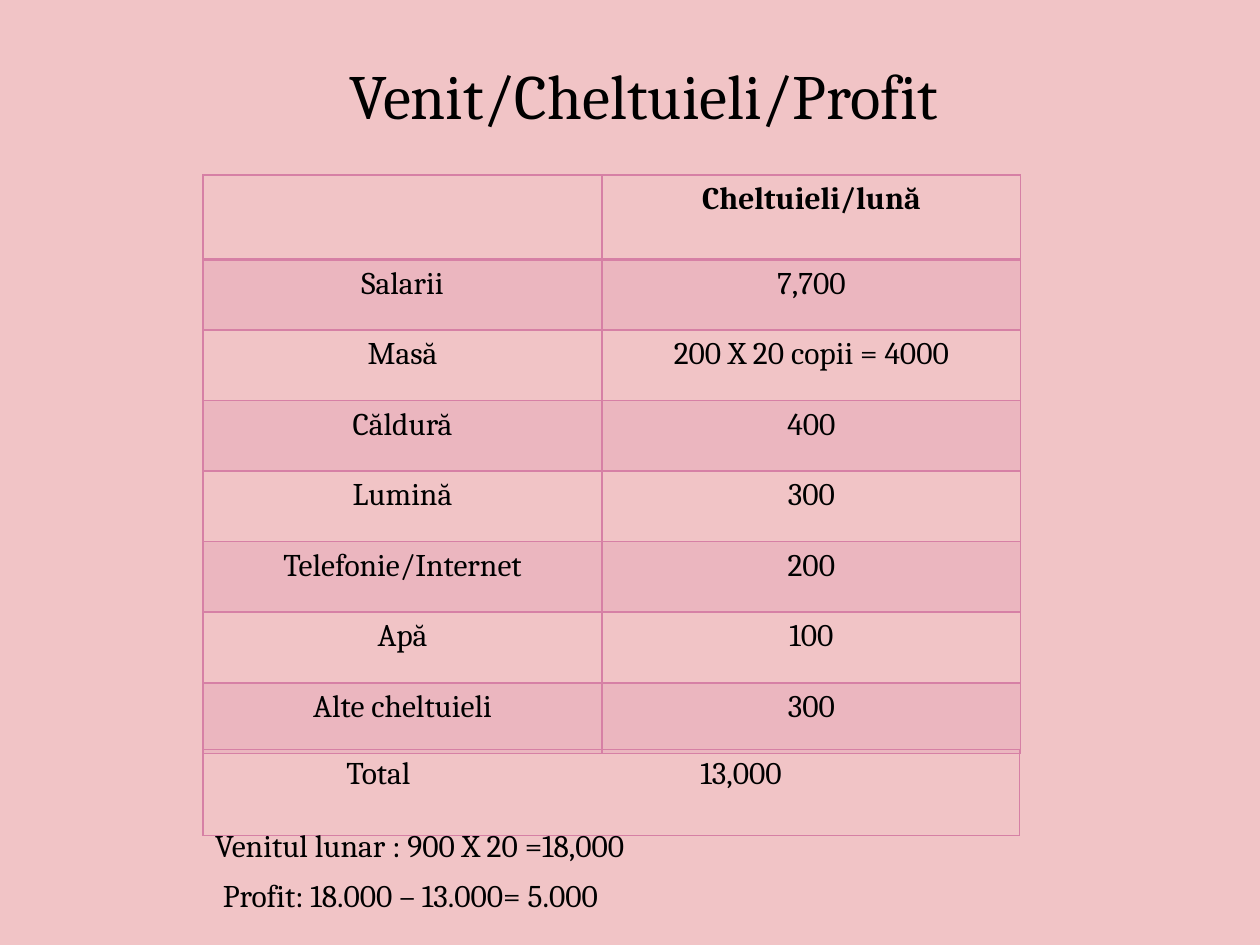
"""Build the monthly income, cost and profit slide."""
from lxml import etree
from pptx import Presentation
from pptx import util as u
from pptx.dml.color import RGBColor
from pptx.enum import text
from pptx.oxml import ns

BACK = RGBColor(0xF1, 0xC4, 0xC6)
PINK = RGBColor(0xD6, 0x80, 0xA5)
BLACK = RGBColor(0, 0, 0)
MID = text.PP_ALIGN.CENTER
LEFT = text.PP_ALIGN.LEFT
COSTS = [
    ("", "Cheltuieli/lună"),
    ("Salarii", "7,700"),
    ("Masă", "200 X 20 copii = 4000"),
    ("Căldură", "400"),
    ("Lumină", "300"),
    ("Telefonie/Internet", "200"),
    ("Apă", "100"),
    ("Alte cheltuieli", "300"),
]


def put(item, vals):
    for key, val in vals.items():
        setattr(item, key, val)


def sub(node, tag, **vals):
    return etree.SubElement(node, ns.qn(tag), **vals)


class Page:
    def __init__(self, slide):
        self.slide = slide
        self.font = {"name": "Cambria", "size": u.Pt(18), "bold": False}
        fill = slide.background.fill
        fill.solid()
        fill.fore_color.rgb = BACK

    def letter(self, para, words, align=LEFT, tab=None, **style):
        para.alignment = align
        if tab:
            stops = sub(para._p.get_or_add_pPr(), "a:tabLst")
            sub(stops, "a:tab", pos=str(u.Inches(tab)), algn="l")
        put(para.font, self.font | style)
        para.font.color.rgb = BLACK
        if words:
            run = para.add_run()
            run.text = words
            put(run.font, self.font | style)
            run.font.color.rgb = BLACK

    def label(self, words, place, frame=None, gap=None, **style):
        box = self.slide.shapes.add_textbox(*map(u.Inches, place))
        put(box.text_frame, {"word_wrap": True} | (frame or {}))
        para = box.text_frame.paragraphs[0]
        para.line_spacing = gap
        self.letter(para, words, **style)

    def edge(self, cell, top=1, base=1):
        props = cell._tc.get_or_add_tcPr()
        for side, width in zip("LRTB", (1, 1, top, base)):
            line = sub(props, f"a:ln{side}", w=str(u.Pt(width)))
            sub(sub(line, "a:solidFill"), "a:srgbClr", val=str(PINK))

    def tint(self, cell, shade):
        if not shade:
            cell.fill.background()
            return
        cell.fill.solid()
        cell.fill.fore_color.rgb = PINK
        color = cell._tc.tcPr.find(ns.qn("a:solidFill"))[0]
        sub(color, "a:alpha", val="20000")

    def grid(self, left, top, cols, rows):
        place = map(u.Inches, (left, top, sum(cols), sum(rows)))
        table = self.slide.shapes.add_table(len(rows), len(cols), *place).table
        put(table, {"first_row": False, "horz_banding": False})
        for col, width in zip(table.columns, cols):
            col.width = u.Inches(width)
        for row, height in zip(table.rows, rows):
            row.height = u.Inches(height)
        return table

    def costs(self, data, left, top, cols, rows):
        table = self.grid(left, top, cols, rows)
        for i, row in enumerate(data):
            for j, words in enumerate(row):
                cell = table.cell(i, j)
                self.edge(cell, top=1 + (i == 1), base=1 + (i == 0))
                self.tint(cell, i % 2)
                self.letter(cell.text_frame.paragraphs[0], words, MID, bold=i == 0)

    def total(self, words, left, top, width, height, inset, tab):
        cell = self.grid(left, top, [width], [height]).cell(0, 0)
        self.edge(cell)
        self.tint(cell, False)
        cell.margin_left = u.Inches(inset)
        self.letter(cell.text_frame.paragraphs[0], words, tab=tab)


def main():
    deck = Presentation()
    put(deck, {"slide_width": u.Inches(10), "slide_height": u.Inches(7.5)})
    page = Page(deck.slides.add_slide(deck.slide_layouts[6]))
    page.label("Venit/Cheltuieli/Profit", (2.27, 0.16, 5.68, 0.95),
               {"vertical_anchor": text.MSO_ANCHOR.BOTTOM}, 0.9,
               align=MID, size=u.Pt(36))
    page.costs(COSTS, 1.61, 1.39, [3.17, 3.32], [0.67] + [0.56] * 7)
    page.total("Total\t13,000", 1.61, 5.95, 6.48, 0.68, 1.14, 2.81)
    grow = {"auto_size": text.MSO_AUTO_SIZE.SHAPE_TO_FIT_TEXT}
    page.label("Venitul lunar : 900 X 20 =18,000", (1.61, 6.51, 3.86, 0.4), grow)
    page.label("Profit: 18.000 – 13.000= 5.000", (1.67, 6.9, 3.47, 0.4), grow)
    deck.save("out.pptx")


if __name__ == "__main__":
    main()
